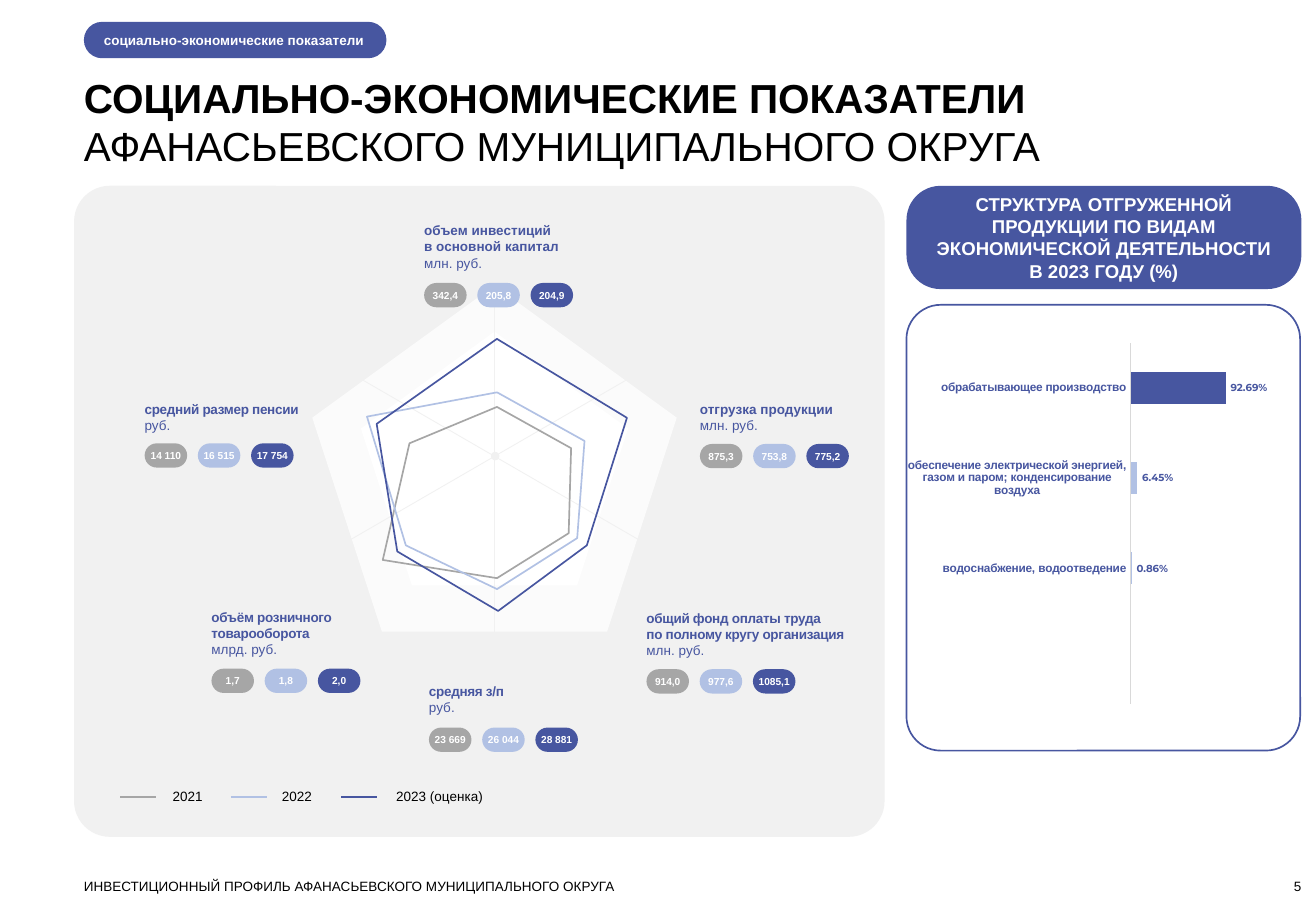
from dataclasses import dataclass
from typing import Any, Optional

from lxml import etree
from pptx import Presentation
from pptx import util as u
from pptx.chart import data as chart_data
from pptx.dml import color
from pptx.enum import chart as charts
from pptx.enum import shapes, text
from pptx.oxml import ns

CELL = u.Inches(0.1)
COLUMNS, ROWS = 108.3, 75
BLUE, LIGHT, GRAY = "4756A0", "B1C1E4", "A6A6A6"
PANEL, PALE, WHITE, BLACK = "F1F1F1", "FBFBFB", "FFFFFF", "000000"
YEAR_COLORS = (GRAY, LIGHT, BLUE)
PILL_WIDTH, PILL_HEIGHT, PILL_STEP = 3.5, 2, 4.38


@dataclass
class Box:
    column: float
    row: float
    width: float
    height: float

    def emu(self) -> list[int]:
        return [grid(n) for n in (self.column, self.row, self.width, self.height)]


@dataclass
class Line:
    words: str
    size: float = 8
    color: str = BLACK
    bold: bool = False
    spacing: int = 0


@dataclass
class Metric:
    column: float
    row: float
    pill_row: float
    title: tuple[str, ...]
    unit: str
    values: tuple[str, str, str]
    spacing: int = 0


@dataclass
class Legend:
    column: float
    label_column: float
    label: str
    color: str


METRICS = (
    Metric(34.9, 18.3, 23.3, ("объем инвестиций", "в основной капитал"), "млн. руб.",
           ("342,4", "205,8", "204,9")),
    Metric(57.6, 33, 36.55, ("отгрузка продукции",), "млн. руб.",
           ("875,3", "753,8", "775,2")),
    Metric(53.2, 50.2, 55.1, ("общий фонд оплаты труда", "по полному кругу организация"),
           "млн. руб.", ("914,0", "977,6", "1085,1"), -20),
    Metric(17.4, 50.1, 55.05, ("объём розничного", "товарооборота"), "млрд. руб.",
           ("1,7", "1,8", "2,0"), -20),
    Metric(11.9, 33, 36.5, ("средний размер пенсии",), "руб.",
           ("14 110", "16 515", "17 754"), -20),
    Metric(35.3, 56.2, 59.9, ("средняя з/п",), "руб.",
           ("23 669", "26 044", "28 881"), -20),
)
LEGENDS = (
    Legend(9.9, 14.2, "2021", GRAY),
    Legend(19, 23.2, "2022", LIGHT),
    Legend(28.1, 32.6, "2023 (оценка)", BLUE),
)
RADAR_SPOKES = (
    ((40.7, 23.5), (40.7, 52.1)),
    ((51.7, 31.2), (28.9, 44.4)),
    ((29.7, 31.2), (52.5, 44.4)),
)
RADAR_OUTLINES = (
    ((33.7, 36.5), (40.9, 33.5), (47, 36.9), (46.8, 43.9), (40.9, 47.6), (31.5, 46.1)),
    ((30.2, 34.3), (40.9, 32.3), (48.1, 36.3), (47.5, 44.3), (40.9, 48.5), (33.4, 44.9)),
    ((31, 34.9), (40.9, 27.9), (51.6, 34.4), (48.3, 44.9), (41, 50.3), (32.7, 45.4)),
)
SECTORS = {
    "": None,
    "водоснабжение, водоотведение": 0.0086,
    "обеспечение электрической энергией, газом и паром; конденсирование воздуха": 0.0645,
    "обрабатывающее производство": 0.9269,
}


def grid(cells: float) -> int:
    return round(cells * CELL)


def rgb(code: str) -> color.RGBColor:
    return color.RGBColor.from_string(code)


def apply(target: Any, values: dict[str, Any]) -> None:
    for name, value in values.items():
        setattr(target, name, value)


def style_font(font: Any, size: float, code: str, bold: bool, name: str = "Arial") -> None:
    apply(font, {"size": u.Pt(size), "bold": bold, "name": name})
    font.color.rgb = rgb(code)


def write(shape: Any, lines: list[Line], align: str = "LEFT", anchor: str = "TOP",
          inset: float = 0, left: float = 0) -> None:
    frame = shape.text_frame
    apply(frame, {
        "word_wrap": True, "auto_size": text.MSO_AUTO_SIZE.NONE,
        "vertical_anchor": text.MSO_ANCHOR[anchor],
        "margin_left": grid(left or inset), "margin_right": grid(inset),
        "margin_top": grid(inset / 2), "margin_bottom": grid(inset / 2),
    })
    for index, line in enumerate(lines):
        paragraph = frame.add_paragraph() if index else frame.paragraphs[0]
        apply(paragraph, {"alignment": text.PP_ALIGN[align], "space_before": u.Pt(0)})
        run = paragraph.add_run()
        run.text = line.words
        style_font(run.font, line.size, line.color, line.bold)
        if line.spacing:
            run._r.get_or_add_rPr().set("spc", str(line.spacing))


def add_label(slide: Any, box: Box, lines: list[Line], align: str = "LEFT") -> None:
    write(slide.shapes.add_textbox(*box.emu()), lines, align)


def paint(shape: Any, fill: Optional[str], outline: Optional[str] = None) -> None:
    shape.shadow.inherit = False
    if fill:
        shape.fill.solid()
        shape.fill.fore_color.rgb = rgb(fill)
    else:
        shape.fill.background()
    if outline:
        shape.line.color.rgb = rgb(outline)
        shape.line.width = u.Pt(1)
    else:
        shape.line.fill.background()


def add_figure(slide: Any, kind: str, box: Box, fill: Optional[str],
               outline: Optional[str] = None, radius: Optional[float] = None) -> Any:
    shape = slide.shapes.add_shape(shapes.MSO_SHAPE[kind], *box.emu())
    paint(shape, fill, outline)
    if radius is not None:
        shape.adjustments[0] = radius
    return shape


def add_line(slide: Any, start: tuple, end: tuple, code: str, width: float) -> None:
    ends = [grid(n) for n in (*start, *end)]
    connector = slide.shapes.add_connector(shapes.MSO_CONNECTOR.STRAIGHT, *ends)
    connector.line.color.rgb = rgb(code)
    connector.line.width = u.Pt(width)
    etree.SubElement(connector._element.spPr, ns.qn("a:effectLst"))


def add_radar(slide: Any) -> None:
    add_figure(slide, "REGULAR_PENTAGON", Box(25.7, 23.5, 30, 28.5), PALE)
    add_figure(slide, "REGULAR_PENTAGON", Box(29.7, 27.3, 22, 20.9), WHITE)
    for start, end in RADAR_SPOKES:
        add_line(slide, start, end, PANEL, 0.5)
    add_figure(slide, "OVAL", Box(40.4, 37.2, 0.7, 0.7), PANEL)


def add_outlines(slide: Any) -> None:
    for points, code in zip(RADAR_OUTLINES, YEAR_COLORS):
        corners = [(grid(x), grid(y)) for x, y in points]
        builder = slide.shapes.build_freeform(*corners[0])
        builder.add_line_segments(corners[1:], close=True)
        paint(builder.convert_to_shape(), None, code)


def add_metric(slide: Any, metric: Metric) -> None:
    lines = [Line(words, 8, BLUE, True, metric.spacing) for words in metric.title]
    lines.append(Line(metric.unit, 8, BLUE))
    add_label(slide, Box(metric.column, metric.row, 17.1, 1.35 * len(lines)), lines)
    for index, (value, code) in enumerate(zip(metric.values, YEAR_COLORS)):
        box = Box(metric.column + index * PILL_STEP, metric.pill_row, PILL_WIDTH, PILL_HEIGHT)
        pill = add_figure(slide, "ROUNDED_RECTANGLE", box, code, radius=0.5)
        write(pill, [Line(value, 6, WHITE, True)], "CENTER", "MIDDLE")


def add_sector_chart(slide: Any) -> None:
    data = chart_data.CategoryChartData(number_format="0.00%")
    data.categories = list(SECTORS)
    data.add_series("Series 1", list(SECTORS.values()))
    chart = slide.shapes.add_chart(
        charts.XL_CHART_TYPE.BAR_CLUSTERED, *Box(74.6, 25, 32.4, 35.8).emu(), data).chart
    apply(chart, {"has_legend": False, "has_title": False})
    style_font(chart.font, 10, BLACK, False, "Calibri")
    apply(chart.value_axis, {"visible": False, "has_major_gridlines": False,
                             "minimum_scale": 0, "maximum_scale": 1})
    axis = chart.category_axis
    axis.major_tick_mark = charts.XL_TICK_MARK.NONE
    axis.format.line.color.rgb = rgb("D9D9D9")
    axis.format.line.width = u.Pt(0.75)
    style_font(axis.tick_labels.font, 7, BLUE, True)
    plot = chart.plots[0]
    apply(plot, {"gap_width": 182, "vary_by_categories": False, "has_data_labels": True})
    apply(plot.data_labels, {
        "show_value": True, "position": charts.XL_LABEL_POSITION.OUTSIDE_END,
        "number_format": "0.00%", "number_format_is_linked": False})
    style_font(plot.data_labels.font, 6, BLUE, True, "Montserrat")
    series = plot.series[0]
    for fill, code in ((series.format.fill, LIGHT), (series.points[3].format.fill, BLUE)):
        fill.solid()
        fill.fore_color.rgb = rgb(code)
    area = chart._chartSpace.chart.plotArea
    for old in area.findall(ns.qn("c:layout")):
        area.remove(old)
    layout = etree.Element(ns.qn("c:layout"))
    manual = etree.SubElement(layout, ns.qn("c:manualLayout"))
    for tag, value in {"layoutTarget": "inner", "xMode": "edge", "yMode": "edge",
                       "x": 0.57, "y": 0.09, "w": 0.26, "h": 0.83}.items():
        etree.SubElement(manual, ns.qn(f"c:{tag}")).set("val", str(value))
    area.insert(0, layout)


def main() -> None:
    presentation = Presentation()
    apply(presentation, {"slide_width": grid(COLUMNS), "slide_height": grid(ROWS)})
    slide = presentation.slides.add_slide(presentation.slide_layouts[5])

    title = slide.shapes.title
    apply(title, dict(zip(("left", "top", "width", "height"), Box(6.9, 6, 96.5, 8.1).emu())))
    write(title, [Line("СОЦИАЛЬНО-ЭКОНОМИЧЕСКИЕ ПОКАЗАТЕЛИ", 24, BLACK, True),
                  Line("АФАНАСЬЕВСКОГО МУНИЦИПАЛЬНОГО ОКРУГА", 24)])

    section = add_figure(slide, "ROUNDED_RECTANGLE", Box(6.9, 1.8, 24.9, 3), BLUE, radius=0.5)
    write(section, [Line("социально-экономические показатели", 8, WHITE, True)],
          anchor="MIDDLE", left=1.2)
    add_figure(slide, "ROUNDED_RECTANGLE", Box(6.1, 15.3, 66.7, 53.6), PANEL, radius=0.055)
    heading = add_figure(slide, "ROUNDED_RECTANGLE", Box(74.6, 15.3, 32.5, 8.5), BLUE, radius=0.33)
    write(heading, [Line(words, 11, WHITE, True) for words in (
        "СТРУКТУРА ОТГРУЖЕННОЙ ПРОДУКЦИИ ПО ВИДАМ ЭКОНОМИЧЕСКОЙ ДЕЯТЕЛЬНОСТИ",
        "В 2023 ГОДУ (%)")], "CENTER", "MIDDLE", inset=1)
    add_figure(slide, "ROUNDED_RECTANGLE", Box(74.6, 25.1, 32.4, 36.7), None, BLUE, 0.087)
    add_sector_chart(slide)

    for legend in LEGENDS:
        add_line(slide, (legend.column, 65.6), (legend.column + 2.95, 65.6), legend.color, 1)
        add_label(slide, Box(legend.label_column, 64.9, 8.6, 1.3), [Line(legend.label)])
    add_radar(slide)
    for metric in METRICS:
        add_metric(slide, metric)
    add_outlines(slide)

    add_label(slide, Box(6.9, 72.3, 80, 1.3),
              [Line("ИНВЕСТИЦИОННЫЙ ПРОФИЛЬ АФАНАСЬЕВСКОГО МУНИЦИПАЛЬНОГО ОКРУГА")])
    add_label(slide, Box(99.1, 72.3, 8, 1.3), [Line("5")], "RIGHT")
    presentation.save("out.pptx")


if __name__ == "__main__":
    main()
